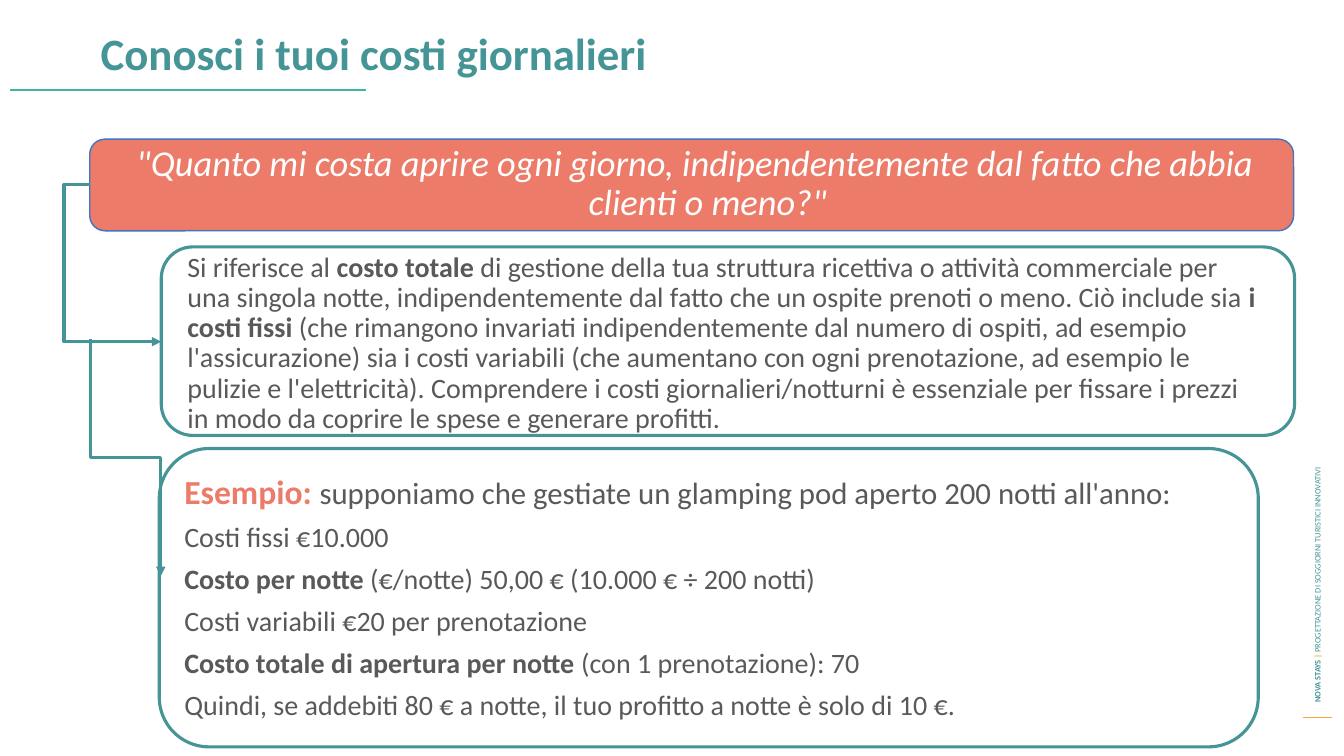
from dataclasses import dataclass

from lxml import etree
from pptx import Presentation
from pptx.dml.color import RGBColor
from pptx.enum.shapes import MSO_CONNECTOR, MSO_SHAPE
from pptx.enum.text import MSO_ANCHOR, PP_ALIGN
from pptx.oxml.ns import qn
from pptx.util import Inches, Pt

STRAIGHT, ELBOW = MSO_CONNECTOR.STRAIGHT, MSO_CONNECTOR.ELBOW
PANEL = MSO_SHAPE.FLOWCHART_ALTERNATE_PROCESS
TOP, MIDDLE = MSO_ANCHOR.TOP, MSO_ANCHOR.MIDDLE
LEFT, CENTER = PP_ALIGN.LEFT, PP_ALIGN.CENTER


@dataclass(frozen=True)
class Theme:
    """Font, colours and type sizes of the slide."""
    font: str = "Calibri"
    teal: str = "459597"
    green: str = "3FB5A1"
    coral: str = "EC7C69"
    blue: str = "4174BA"
    amber: str = "FBA63B"
    grey: str = "595959"
    white: str = "FFFFFF"
    title: float = 32
    quote: float = 26
    lead: float = 24
    intro: float = 22
    body: float = 20
    footer: float = 6


T = Theme()
BODY = {"size": T.body, "color": T.grey}
BOLD = {**BODY, "bold": True}


def add_text(slide, box, paragraphs, anchor=TOP, **formats):
    """Add a text box of paragraphs, each a list of (text, format) runs."""
    s = slide.shapes.add_textbox(*map(Inches, box))
    tf = s.text_frame
    tf.word_wrap, tf.vertical_anchor = True, anchor
    for i, runs in enumerate(paragraphs):
        p = tf.add_paragraph() if i else tf.paragraphs[0]
        for name, value in formats.items():
            setattr(p, name, value)
        for text, look in runs:
            r = p.add_run()
            r.text = text
            r.font.name = T.font
            for name, value in look.items():
                if name == "color":
                    r.font.color.rgb = RGBColor.from_string(value)
                else:
                    setattr(r.font, name, Pt(value) if name == "size" else value)
    return s


def add_panel(slide, box, line, width, fill=None):
    """Add a rounded panel, hollow unless a fill is given."""
    s = slide.shapes.add_shape(PANEL, *map(Inches, box))
    s.shadow.inherit = False
    if fill:
        s.fill.solid()
        s.fill.fore_color.rgb = RGBColor.from_string(fill)
    else:
        s.fill.background()
    s.line.color.rgb = RGBColor.from_string(line)
    s.line.width = Pt(width)


def add_line(slide, start, end, color, width, kind=STRAIGHT):
    """Add a connector without shadow."""
    s = slide.shapes.add_connector(kind, *map(Inches, (*start, *end)))
    s.line.color.rgb = RGBColor.from_string(color)
    s.line.width = Pt(width)
    etree.SubElement(s._element.spPr, qn("a:effectLst"))
    return s


def add_elbow(slide, start, end, bend, rotation=0):
    """Add a teal bent arrow whose bend is a share of its length."""
    s = add_line(slide, start, end, T.teal, 2.25, ELBOW)
    s.rotation = rotation
    spPr = s._element.spPr
    guides = spPr.find(qn("a:prstGeom")).get_or_add_avLst()
    etree.SubElement(guides, qn("a:gd"), name="adj1", fmla=f"val {round(bend * 100000)}")
    etree.SubElement(spPr.find(qn("a:ln")), qn("a:tailEnd"), type="triangle")


def add_footer(slide, box):
    """Add the upright project label and the rule under it."""
    x, y, w, h = box
    add_line(slide, (x, y + h), (x + w, y + h), T.amber, 0.75)
    length, depth = 5.77, 0.2
    label = {"size": T.footer, "color": T.teal}
    s = add_text(slide, (x + w / 2 - length / 2, y + length / 2 - depth / 2, length, depth),
                 [[("NOVA STAYS ", {**label, "bold": True}),
                   ("| ", {**label, "bold": True, "color": T.amber}),
                   ("PROGETTAZIONE DI SOGGIORNI TURISTICI INNOVATIVI", label)]], MIDDLE)
    s.rotation = 270


def add_title(slide, box):
    """Add the slide title and its underline."""
    x, y, w, h = box
    add_text(slide, (x + 0.8, y, w - 0.8, h),
             [[("Conosci i tuoi costi giornalieri",
                {"size": T.title, "color": T.teal, "bold": True})]], line_spacing=0.9)
    add_line(slide, (x, y + 0.62), (x + 3.53, y + 0.62), T.green, 1.5)


def add_quote(slide, box):
    """Add the coral banner with the key question."""
    x, y, w, h = box
    add_panel(slide, box, T.blue, 1, T.coral)
    s = add_text(slide, (x + 0.2, y + 0.07, w - 0.33, h - 0.15),
                 [[('"Quanto mi costa aprire ogni giorno, indipendentemente dal fatto '
                    'che abbia clienti o meno?"',
                    {"size": T.quote, "color": T.white, "italic": True})]],
                 MIDDLE, alignment=CENTER, line_spacing=0.9)
    pPr = s.text_frame.paragraphs[0]._p.get_or_add_pPr()
    pPr.set("marL", str(Inches(0.25)))
    pPr.set("indent", str(Inches(-0.25)))


def add_definition(slide, box):
    """Add the panel that explains the daily cost."""
    x, y, w, h = box
    add_text(slide, (x + 0.16, y + 0.01, w - 0.39, 0.88), [[
        ("Si riferisce al ", BODY),
        ("costo totale ", BOLD),
        ("di gestione della tua struttura ricettiva o attività commerciale per una singola "
         "notte, indipendentemente dal fatto che un ospite prenoti o meno. Ciò include sia ",
         BODY),
        ("i costi fissi ", BOLD),
        ("(che rimangono invariati indipendentemente dal numero di ospiti, ad esempio "
         "l'assicurazione) sia i costi variabili (che aumentano con ogni prenotazione, ad "
         "esempio le pulizie e l'elettricità). Comprendere i costi giornalieri/notturni è "
         "essenziale per fissare i prezzi in modo da coprire le spese e generare profitti.",
         BODY)]], alignment=LEFT, line_spacing=0.9)
    add_panel(slide, box, T.teal, 2.25)


def add_example(slide, box):
    """Add the panel with the worked example."""
    x, y, w, h = box
    add_text(slide, (x + 0.15, y + 0.17, w - 0.27, 0.88), [
        [("Esempio: ", {"size": T.lead, "color": T.coral, "bold": True}),
         ("supponiamo che gestiate un glamping pod aperto 200 notti all'anno:",
          {**BODY, "size": T.intro})],
        [("Costi fissi €10.000", BODY)],
        [("Costo per notte ", BOLD), ("(€/notte) 50,00 € (10.000 € ÷ 200 notti)", BODY)],
        [("Costi variabili €20 per prenotazione", BODY)],
        [("Costo totale di apertura per notte ", BOLD), ("(con 1 prenotazione): 70", BODY)],
        [("Quindi, se addebiti 80 € a notte, il tuo profitto a notte è solo di 10 €.", BODY)],
    ], alignment=LEFT, space_after=Pt(6))
    add_panel(slide, box, T.teal, 2.25)


def main():
    """Build the slide and save it."""
    prs = Presentation()
    prs.slide_width, prs.slide_height = Inches(13.33), Inches(7.5)
    slide = prs.slides.add_slide(prs.slide_layouts[6])
    add_footer(slide, (12.92, 1.3, 0.29, 5.82))
    add_title(slide, (0.1, 0.27, 12.41, 0.88))
    add_quote(slide, (0.89, 1.38, 11.94, 0.91))
    add_definition(slide, (1.6, 2.45, 11.24, 1.87))
    add_example(slide, (1.58, 4.45, 10.9, 2.96))
    add_elbow(slide, (0.89, 1.83), (1.6, 3.39), -0.36)
    add_elbow(slide, (2.42, 4.19), (0.07, 4.89), 0.5, 270)
    prs.save("out.pptx")


if __name__ == "__main__":
    main()
